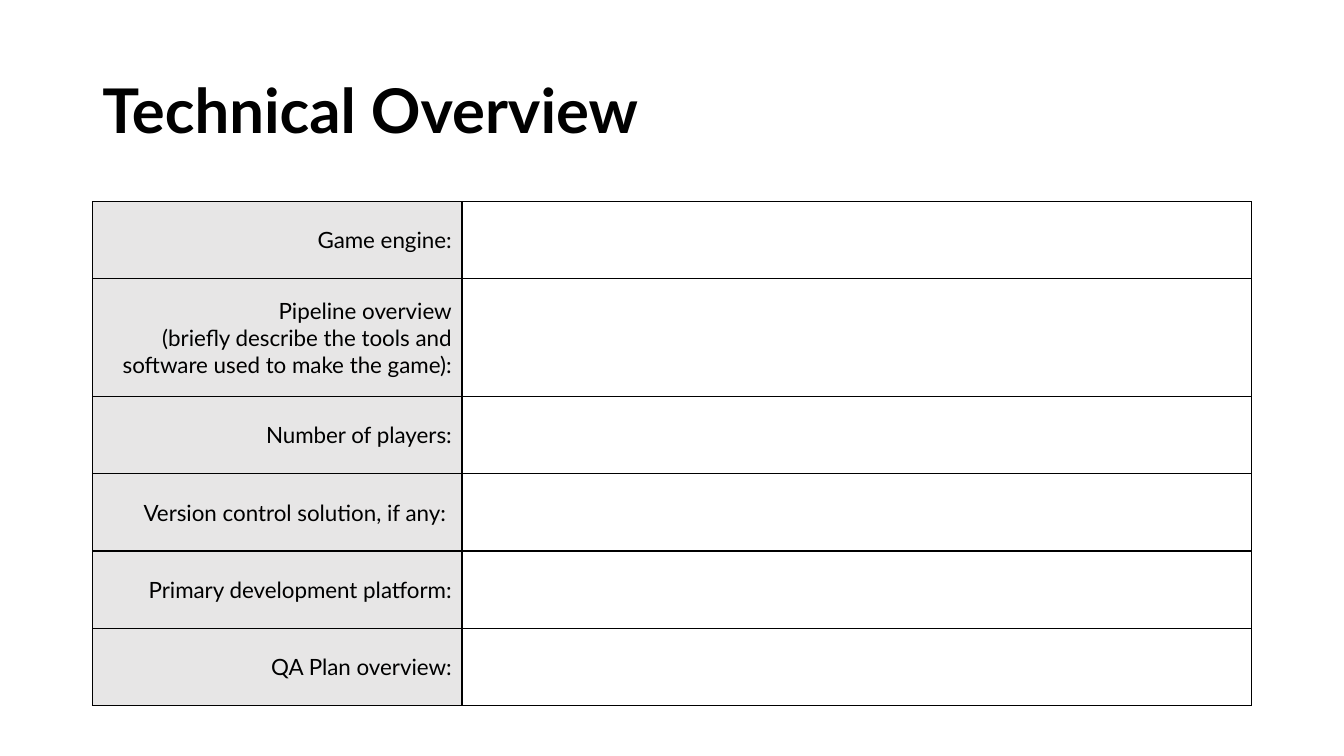
from dataclasses import dataclass

from lxml import etree
from pptx import Presentation
from pptx.dml.color import RGBColor
from pptx.enum.text import MSO_ANCHOR, MSO_AUTO_SIZE, PP_ALIGN
from pptx.oxml.ns import qn
from pptx.slide import Slide
from pptx.table import _Cell
from pptx.text.text import _Paragraph
from pptx.util import Pt

MIDDLE = MSO_ANCHOR.MIDDLE
FIXED = MSO_AUTO_SIZE.NONE
LEFT = PP_ALIGN.LEFT
RIGHT = PP_ALIGN.RIGHT


@dataclass(frozen=True)
class Theme:
    font: str = "Lato"
    ink: str = "000000"
    shade: str = "E7E6E6"
    head: float = 44
    body: float = 16
    rule: float = 1


@dataclass(frozen=True)
class Row:
    label: str
    height: float = 55.2


THEME = Theme()
EDGE = 66
WIDTH = 828
LABEL = 264
ROWS = [
    Row("Game engine:"),
    Row("Pipeline overview\n(briefly describe the tools and software used to make the game):", 84),
    Row("Number of players:"),
    Row("Version control solution, if any: "),
    Row("Primary development platform:"),
    Row("QA Plan overview:"),
]


def style(para: _Paragraph, size: float, bold: bool, align: PP_ALIGN) -> None:
    para.alignment = align
    for run in para.runs:
        run.font.name = THEME.font
        run.font.size = Pt(size)
        run.font.bold = bold
        run.font.color.rgb = RGBColor.from_string(THEME.ink)


def border(cell: _Cell) -> None:
    props = cell._tc.get_or_add_tcPr()
    for side in ("lnL", "lnR", "lnT", "lnB"):
        line = etree.SubElement(props, qn(f"a:{side}"), w=str(Pt(THEME.rule)))
        fill = etree.SubElement(line, qn("a:solidFill"))
        etree.SubElement(fill, qn("a:srgbClr"), val=THEME.ink)


def add_title(slide: Slide, text: str) -> None:
    title = slide.shapes.title
    title.left, title.top = Pt(EDGE), Pt(28.75)
    title.width, title.height = Pt(WIDTH), Pt(104.4)
    frame = title.text_frame
    frame.text = text
    frame.auto_size = FIXED
    frame.vertical_anchor = MIDDLE
    para = frame.paragraphs[0]
    para.line_spacing = 0.9
    style(para, THEME.head, True, LEFT)


def add_grid(slide: Slide, rows: list[Row]) -> None:
    total = sum(row.height for row in rows)
    grid = slide.shapes.add_table(
        len(rows), 2, Pt(EDGE), Pt(144), Pt(WIDTH), Pt(total)
    ).table
    grid.first_row = False
    grid.horz_banding = False
    grid.columns[0].width = Pt(LABEL)
    grid.columns[1].width = Pt(WIDTH - LABEL)
    for index, row in enumerate(rows):
        grid.rows[index].height = Pt(row.height)
        label, answer = grid.cell(index, 0), grid.cell(index, 1)
        border(label)
        border(answer)
        label.fill.solid()
        label.fill.fore_color.rgb = RGBColor.from_string(THEME.shade)
        answer.fill.background()
        label.vertical_anchor = MIDDLE
        para = label.text_frame.paragraphs[0]
        para.text = row.label
        style(para, THEME.body, False, RIGHT)


def main() -> None:
    deck = Presentation()
    deck.slide_width, deck.slide_height = Pt(960), Pt(540)
    slide = deck.slides.add_slide(deck.slide_layouts[5])
    add_title(slide, "Technical Overview")
    add_grid(slide, ROWS)
    deck.save("out.pptx")


if __name__ == "__main__":
    main()
